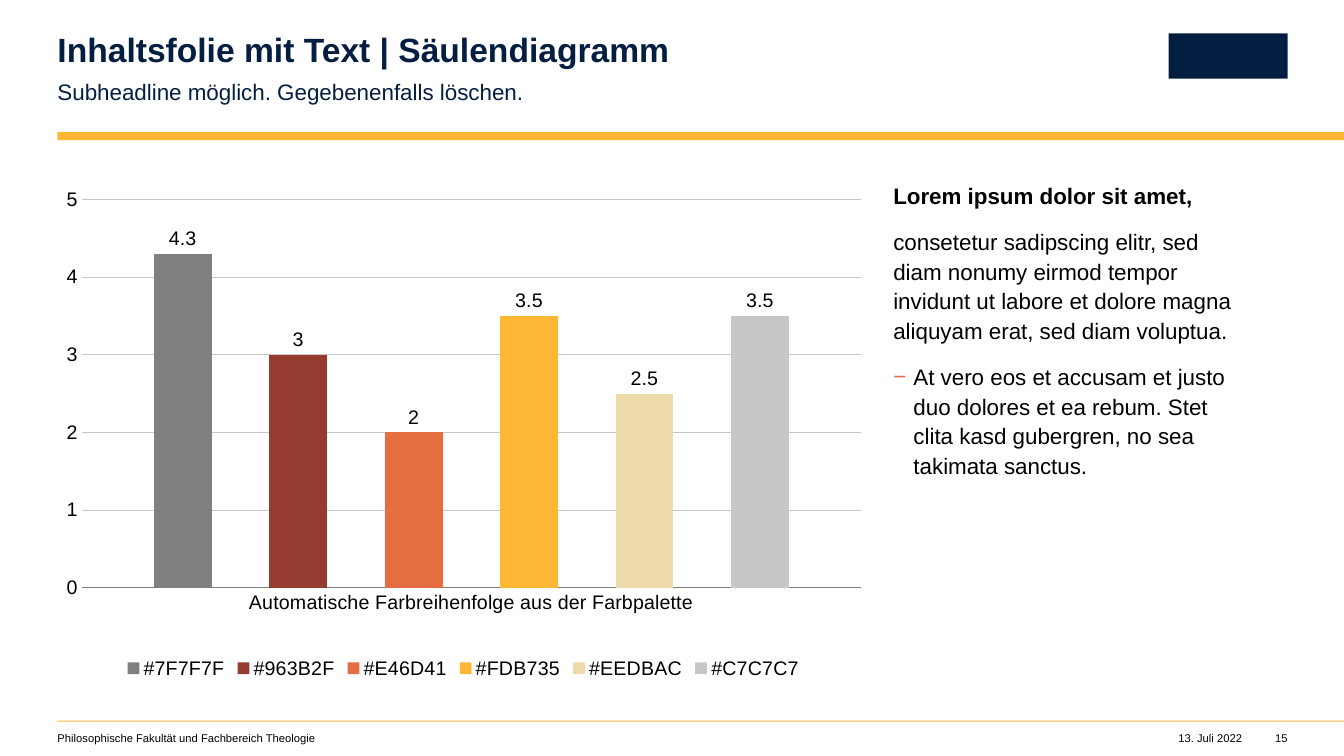
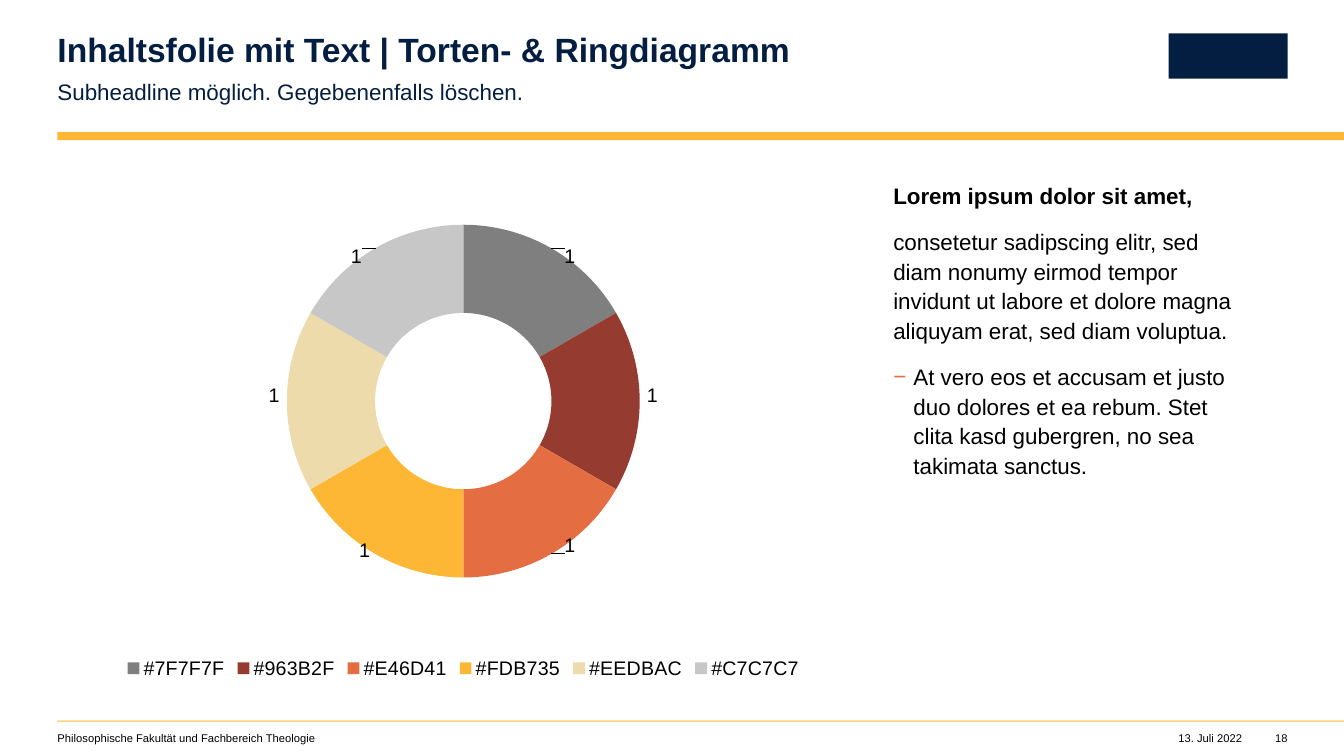
from lxml import etree
from pptx import Presentation
from pptx.chart.data import CategoryChartData
from pptx.dml.color import RGBColor
from pptx.enum import chart as ch, shapes, text
from pptx.oxml import ns
from pptx.util import Inches, Pt

# Theme
THEME = {
    "font": "Arial", "navy": "041E42", "gold": "FDB735", "black": "000000",
    "accent": "E46D41", "axis": "7F7F7F", "grid": "C7C7C7",
    "title": 24, "body": 16, "chart": 14, "foot": 8,
    "hues": ["7F7F7F", "963B2F", "E46D41", "FDB735", "EEDBAC", "C7C7C7"],
}
LEFT, TOP, EDGE, WIDE = 0.57, 1.78, 12.77, 13.33

# Content
SUB = "Subheadline möglich. Gegebenenfalls löschen."
UNIT = "Philosophische Fakultät und Fachbereich Theologie"
DATE = "13. Juli 2022"
BODY = [
    ("Lorem ipsum dolor sit amet,", "bold"),
    ("consetetur sadipscing elitr, sed diam nonumy eirmod tempor invidunt "
     "ut labore et dolore magna aliquyam erat, sed diam voluptua.", "plain"),
    ("At vero eos et accusam et justo duo dolores et ea rebum. Stet clita "
     "kasd gubergren, no sea takimata sanctus.", "dash"),
]
NAMES = ["#" + hue for hue in THEME["hues"]]
BARS = {
    "cat": "Automatische Farbreihenfolge aus der Farbpalette",
    "vals": [4.3, 3, 2, 3.5, 2.5, 3.5],
    "plot": (0.03, 0.04, 0.96, 0.77),
}
RING = {
    "vals": [1] * 6,
    "plot": (0.21, 0.09, 0.58, 0.7),
    # Label shifts as shares of the chart size
    "shift": [(0.05, -0.06), (0.07, -0.01), (0.05, 0.06),
              (-0.04, 0.07), (-0.07, -0.01), (-0.05, -0.06)],
}


def rgb(hue):
    return RGBColor.from_string(hue)


def style(font, size, hue=THEME["black"], bold=False):
    font.name, font.size, font.bold = THEME["font"], Pt(size), bold
    font.color.rgb = rgb(hue)


def paint(fmt, hue):
    fmt.fill.solid()
    fmt.fill.fore_color.rgb = rgb(hue)


def add_box(slide, left, top, width, height, hue):
    box = slide.shapes.add_shape(
        shapes.MSO_SHAPE.RECTANGLE,
        Inches(left), Inches(top), Inches(width), Inches(height))
    box.shadow.inherit = False
    paint(box, hue)
    box.line.fill.background()


def add_frame(slide, left, top, width, height, inset=0):
    frame = slide.shapes.add_textbox(
        Inches(left), Inches(top), Inches(width), Inches(height)).text_frame
    frame.word_wrap = True
    frame.margin_left = frame.margin_top = frame.margin_bottom = 0
    frame.margin_right = Inches(inset)
    return frame


def add_line(slide, spot, words, size, hue=THEME["black"], bold=False,
             space=1.0, right=False):
    par = add_frame(slide, *spot).paragraphs[0]
    par.text, par.line_spacing = words, space
    if right:
        par.alignment = text.PP_ALIGN.RIGHT
    style(par.font, size, hue, bold)


def add_dash(par):
    props = par._p.get_or_add_pPr()
    props.set("marL", str(Inches(0.2)))
    props.set("indent", str(-Inches(0.2)))
    color = etree.SubElement(props, ns.qn("a:buClr"))
    etree.SubElement(color, ns.qn("a:srgbClr"), val=THEME["accent"])
    etree.SubElement(props, ns.qn("a:buFont"), typeface=THEME["font"])
    etree.SubElement(props, ns.qn("a:buChar"), char="−")


def add_body(slide):
    frame = add_frame(slide, 8.86, TOP, 3.91, 5, 0.39)
    for i, (words, kind) in enumerate(BODY):
        par = frame.add_paragraph() if i else frame.paragraphs[0]
        par.text, par.line_spacing, par.space_after = words, 1.1, Pt(12)
        if kind == "dash":
            add_dash(par)
        style(par.font, THEME["body"], bold=kind == "bold")


def add_base(deck, title, page):
    """Add a slide with header, bands, side text and footer."""
    slide = deck.slides.add_slide(deck.slide_layouts[6])
    for top, height in ((1.31, 0.08), (7.15, 0.01)):
        add_box(slide, LEFT, top, WIDE - LEFT, height, THEME["gold"])
    add_box(slide, 11.59, 0.33, 1.18, 0.45, THEME["navy"])
    add_line(slide, (LEFT, 0.33, 7.49, 0.36), title, THEME["title"],
             THEME["navy"], True, 0.9)
    add_line(slide, (LEFT, 0.75, 7.49, 0.27), SUB, THEME["body"],
             THEME["navy"], space=1.1)
    add_body(slide)
    foot = THEME["foot"]
    add_line(slide, (LEFT, 7.26, 5.98, 0.13), UNIT, foot)
    add_line(slide, (11.39, 7.26, 0.93, 0.13), DATE, foot, right=True)
    add_line(slide, (EDGE - 0.21, 7.26, 0.21, 0.13), page, foot, right=True)
    return slide


def make_layout(target=None, **vals):
    layout = etree.Element(ns.qn("c:layout"))
    manual = etree.SubElement(layout, ns.qn("c:manualLayout"))
    if target:
        etree.SubElement(manual, ns.qn("c:layoutTarget"), val=target)
        for mode in ("xMode", "yMode"):
            etree.SubElement(manual, ns.qn("c:" + mode), val="edge")
    for key, val in vals.items():
        etree.SubElement(manual, ns.qn("c:" + key), val=str(val))
    return layout


def add_graph(slide, kind, data, plot):
    graph = slide.shapes.add_chart(
        kind, Inches(LEFT), Inches(TOP), Inches(8.05), Inches(5), data).chart
    graph.has_title = False
    style(graph.font, THEME["chart"])
    graph.has_legend = True
    graph.legend.position = ch.XL_LEGEND_POSITION.BOTTOM
    graph.legend.include_in_layout = False
    style(graph.legend.font, THEME["chart"])
    area = graph.element.xpath("//c:plotArea")[0]
    for old in area.findall(ns.qn("c:layout")):
        area.remove(old)
    area.insert(0, make_layout("inner", **dict(zip("xywh", plot))))
    return graph


def show_vals(labels):
    labels.show_value = True
    style(labels.font, THEME["chart"])


def add_bars(slide):
    data = CategoryChartData()
    data.categories = [BARS["cat"]]
    for name, val in zip(NAMES, BARS["vals"]):
        data.add_series(name, [val])
    graph = add_graph(slide, ch.XL_CHART_TYPE.COLUMN_CLUSTERED, data,
                      BARS["plot"])
    plot = graph.plots[0]
    plot.gap_width, plot.overlap, plot.vary_by_categories = 250, -100, False
    for bar, hue in zip(plot.series, THEME["hues"]):
        paint(bar.format, hue)
        show_vals(bar.data_labels)
        bar.data_labels.position = ch.XL_LABEL_POSITION.OUTSIDE_END
    # Axes
    cat, val = graph.category_axis, graph.value_axis
    for axis in (cat, val):
        axis.major_tick_mark = ch.XL_TICK_MARK.NONE
        style(axis.tick_labels.font, THEME["chart"])
    val.minimum_scale, val.maximum_scale, val.major_unit = 0, 5, 1
    val.format.line.fill.background()
    val.has_major_gridlines = True
    for line, hue in ((cat.format.line, THEME["axis"]),
                      (val.major_gridlines.format.line, THEME["grid"])):
        line.width = Pt(0.5)
        line.color.rgb = rgb(hue)


def add_ring(slide):
    data = CategoryChartData()
    data.categories = NAMES
    data.add_series("Series 1", RING["vals"])
    graph = add_graph(slide, ch.XL_CHART_TYPE.DOUGHNUT, data, RING["plot"])
    ring = graph.plots[0].series[0]
    show_vals(ring.data_labels)
    for i, hue in enumerate(THEME["hues"]):
        point = ring.points[i]
        paint(point.format, hue)
        style(point.data_label.font, THEME["chart"])
    root = graph.element
    root.xpath("//c:holeSize")[0].set("val", "80")
    for label, (x, y) in zip(root.xpath("//c:dLbl"), RING["shift"]):
        label.insert(1, make_layout(x=x, y=y))


SLIDES = [
    ("Inhaltsfolie mit Text | Säulendiagramm", "15", add_bars),
    ("Inhaltsfolie mit Text | Torten- & Ringdiagramm", "18", add_ring),
]


def main():
    deck = Presentation()
    deck.slide_width, deck.slide_height = Inches(WIDE), Inches(7.5)
    for title, page, draw in SLIDES:
        draw(add_base(deck, title, page))
    deck.save("out.pptx")


if __name__ == "__main__":
    main()
